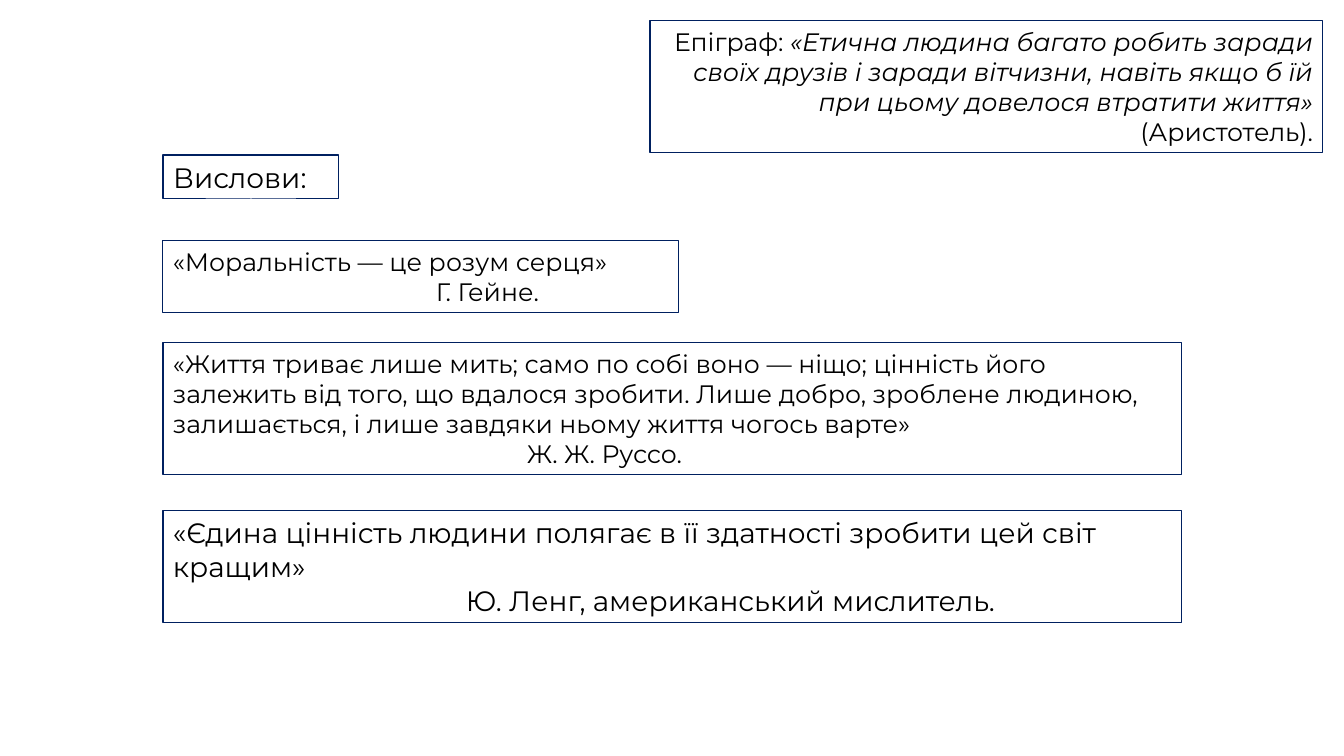
from pptx import Presentation
from pptx.dml.color import RGBColor
from pptx.enum.shapes import MSO_SHAPE
from pptx.enum.text import MSO_ANCHOR, MSO_AUTO_SIZE, PP_ALIGN
from pptx.util import Pt

PX = 914400 / 100.8
WHITE = RGBColor(0xFF, 0xFF, 0xFF)
BLACK = RGBColor(0x00, 0x00, 0x00)
NAVY = RGBColor(0x00, 0x20, 0x60)
FONT = "Montserrat"
RECTANGLE = MSO_SHAPE.RECTANGLE
LEFT, RIGHT = PP_ALIGN.LEFT, PP_ALIGN.RIGHT
TOP = MSO_ANCHOR.TOP
FIXED = MSO_AUTO_SIZE.NONE

QUOTES = [
    ((163, 241, 516, 72), "«Моральність — це розум серця»", "Г. Гейне.", 263, 18),
    ((163, 343, 1019, 132),
     "«Життя триває лише мить; само по собі воно — ніщо; цінність його "
     "залежить від того, що вдалося зробити. Лише добро, зроблене людиною, "
     "залишається, і лише завдяки ньому життя чогось варте»",
     "Ж. Ж. Руссо.", 354, 18),
    ((163, 511, 1019, 112),
     "«Єдина цінність людини полягає в її здатності зробити цей світ кращим»",
     "Ю. Ленг, американський мислитель.", 293, 20),
]


def px(length):
    return round(length * PX)


def add_text(paragraph, text, size=18, italic=False, align=LEFT, indent=0):
    paragraph.alignment = align
    if indent:
        paragraph._p.get_or_add_pPr().set("marL", str(px(indent)))
    run = paragraph.add_run()
    run.text = text
    run.font.name = FONT
    run.font.size = Pt(size)
    run.font.bold = False
    run.font.italic = italic
    run.font.color.rgb = BLACK


def frame(panel, box):
    panel.left, panel.top, panel.width, panel.height = map(px, box)
    panel.fill.solid()
    panel.fill.fore_color.rgb = WHITE
    panel.line.color.rgb = NAVY
    panel.line.width = Pt(0.75)
    text_frame = panel.text_frame
    text_frame.word_wrap = True
    text_frame.auto_size = FIXED
    text_frame.vertical_anchor = TOP
    return text_frame


def add_panel(slide, box):
    panel = slide.shapes.add_shape(RECTANGLE, *map(px, box))
    panel.shadow.inherit = False
    return frame(panel, box)


def add_epigraph(slide, box):
    line = add_panel(slide, box).paragraphs[0]
    add_text(line, "Епіграф: ", align=RIGHT)
    add_text(line, "«Етична людина багато робить заради своїх друзів і заради "
             "вітчизни, навіть якщо б їй при цьому довелося втратити життя» ",
             italic=True, align=RIGHT)
    add_text(line, "(Аристотель).", align=RIGHT)


def add_heading(slide, box):
    add_text(frame(slide.shapes.title, box).paragraphs[0], "Вислови:", size=20)


def add_quote(slide, box, saying, author, indent, size):
    quote = add_panel(slide, box)
    add_text(quote.paragraphs[0], saying, size=size)
    add_text(quote.add_paragraph(), author, size=size, indent=indent)


def main():
    deck = Presentation()
    deck.slide_width, deck.slide_height = px(1344), px(756)
    slide = deck.slides.add_slide(deck.slide_layouts[5])
    add_epigraph(slide, (650, 21, 673, 132))
    add_heading(slide, (163, 155, 176, 44))
    for quote in QUOTES:
        add_quote(slide, *quote)
    deck.save("out.pptx")


if __name__ == "__main__":
    main()
